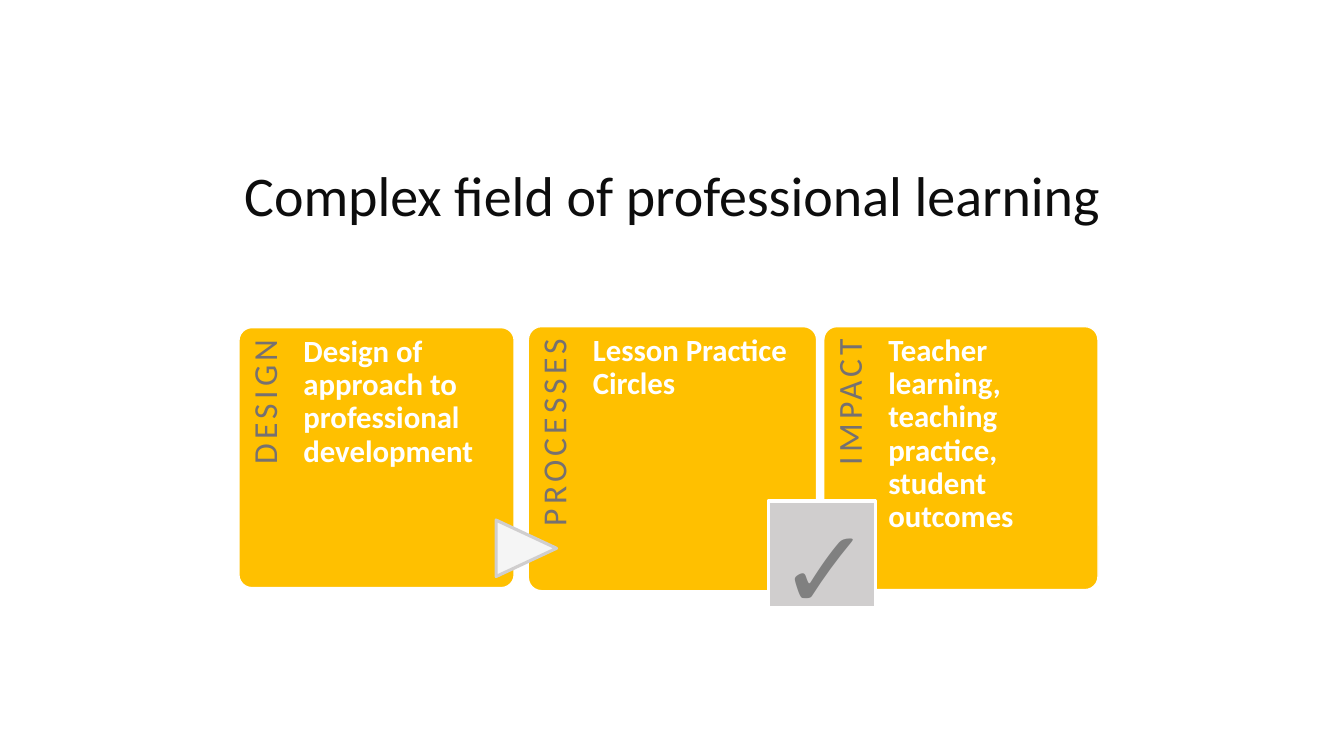
import pptx
import pptx.dml.color
import pptx.enum.shapes
import pptx.enum.text
import pptx.oxml
import pptx.oxml.ns
import pptx.util

PX = 9144  # EMU per px, 100 px to the inch

WHITE = pptx.dml.color.RGBColor(0xFF, 0xFF, 0xFF)
AMBER = pptx.dml.color.RGBColor(0xFF, 0xC0, 0x00)
LABEL_GREY = pptx.dml.color.RGBColor(0x76, 0x71, 0x71)
ARROW_GREY = pptx.dml.color.RGBColor(0xF5, 0xF5, 0xF5)
BADGE_GREY = pptx.dml.color.RGBColor(0xD0, 0xCE, 0xCE)
TICK_GREY = pptx.dml.color.RGBColor(0x80, 0x80, 0x80)
INK = pptx.dml.color.RGBColor(0x0D, 0x0D, 0x0D)

SHAPE = pptx.enum.shapes.MSO_SHAPE
ALIGN = pptx.enum.text.PP_ALIGN
ANCHOR = pptx.enum.text.MSO_ANCHOR

TITLE = "Complex field of professional learning"
# label, body text, left, top, width, height
CARDS = [
    ("DESIGN", "Design of approach to professional development", 237, 325, 273, 258),
    ("PROCESSES", "Lesson Practice Circles", 524, 324, 286, 262),
    ("IMPACT", "Teacher learning, teaching practice, student outcomes", 817, 324, 272, 261),
]


def emu(*lengths):
    return [round(length * PX) for length in lengths]


def add_panel(slide, preset, box, fill, line, line_pt):
    panel = slide.shapes.add_shape(preset, *emu(*box))
    panel.shadow.inherit = False
    panel.fill.solid()
    panel.fill.fore_color.rgb = fill
    panel.line.color.rgb = line
    panel.line.width = pptx.util.Pt(line_pt)
    return panel


def write(frame, words, size, color, bold=False, align=ALIGN.LEFT,
          spacing=1.0, insets=(10, 5, 10, 5), anchor=ANCHOR.TOP):
    frame.word_wrap = True
    frame.auto_size = pptx.enum.text.MSO_AUTO_SIZE.NONE
    frame.vertical_anchor = anchor
    (frame.margin_left, frame.margin_top,
     frame.margin_right, frame.margin_bottom) = emu(*insets)
    paragraph = frame.paragraphs[0]
    paragraph.alignment = align
    paragraph.line_spacing = spacing
    run = paragraph.add_run()
    run.text = words
    run.font.name = "Calibri"
    run.font.size = pptx.util.Pt(size)
    run.font.bold = bold
    run.font.color.rgb = color
    return run


def add_card(slide, label, body, left, top, width, height):
    card = add_panel(slide, SHAPE.ROUNDED_RECTANGLE,
                     (left, top, width, height), AMBER, WHITE, 1)
    card.adjustments[0] = 0.05

    # Label turned upright along the left edge, reading upwards
    length, depth = 0.82 * height, 0.2 * width
    center_x, center_y = left + depth / 2, top + length / 2
    heading = slide.shapes.add_textbox(
        *emu(center_x - length / 2, center_y - depth / 2, length, depth))
    heading.rotation = 270
    run = write(heading.text_frame, label, 24, LABEL_GREY, align=ALIGN.RIGHT,
                spacing=0.9, insets=(0, 9, 12, 0))
    run.font._element.set("spc", "300")

    # Body text beside the label
    detail = slide.shapes.add_textbox(
        *emu(left + 64, top, 0.745 * width, height))
    write(detail.text_frame, body, 22, WHITE, bold=True,
          spacing=0.9, insets=(0, 8, 0, 0))


def add_tick_badge(slide):
    add_panel(slide, SHAPE.RECTANGLE, (762, 497, 106, 106), BADGE_GREY, WHITE, 2.25)
    tick = slide.shapes.add_textbox(*emu(762, 488, 83, 145))
    run = write(tick.text_frame, "✓", 80, TICK_GREY, bold=True, anchor=ANCHOR.MIDDLE)
    outline = pptx.oxml.parse_xml(
        f'<a:ln {pptx.oxml.ns.nsdecls("a")} w="28575"><a:solidFill>'
        f'<a:srgbClr val="{WHITE}"/></a:solidFill></a:ln>')
    run.font._element.insert(0, outline)


def main():
    deck = pptx.Presentation()
    deck.slide_width, deck.slide_height = emu(1333, 750)
    slide = deck.slides.add_slide(deck.slide_layouts[5])

    # Title
    title = slide.shapes.title
    title.left, title.top, title.width, title.height = emu(203, 164, 927, 67)
    write(title.text_frame, TITLE, 40, INK, align=ALIGN.CENTER, spacing=0.85)

    # Three stages
    for card in CARDS:
        add_card(slide, *card)

    # Arrow from design to processes, tick between processes and impact
    arrow = add_panel(slide, SHAPE.FLOWCHART_EXTRACT, (494, 514, 56, 60),
                      ARROW_GREY, BADGE_GREY, 2.25)
    arrow.rotation = 90
    add_tick_badge(slide)

    deck.save("out.pptx")


if __name__ == "__main__":
    main()
